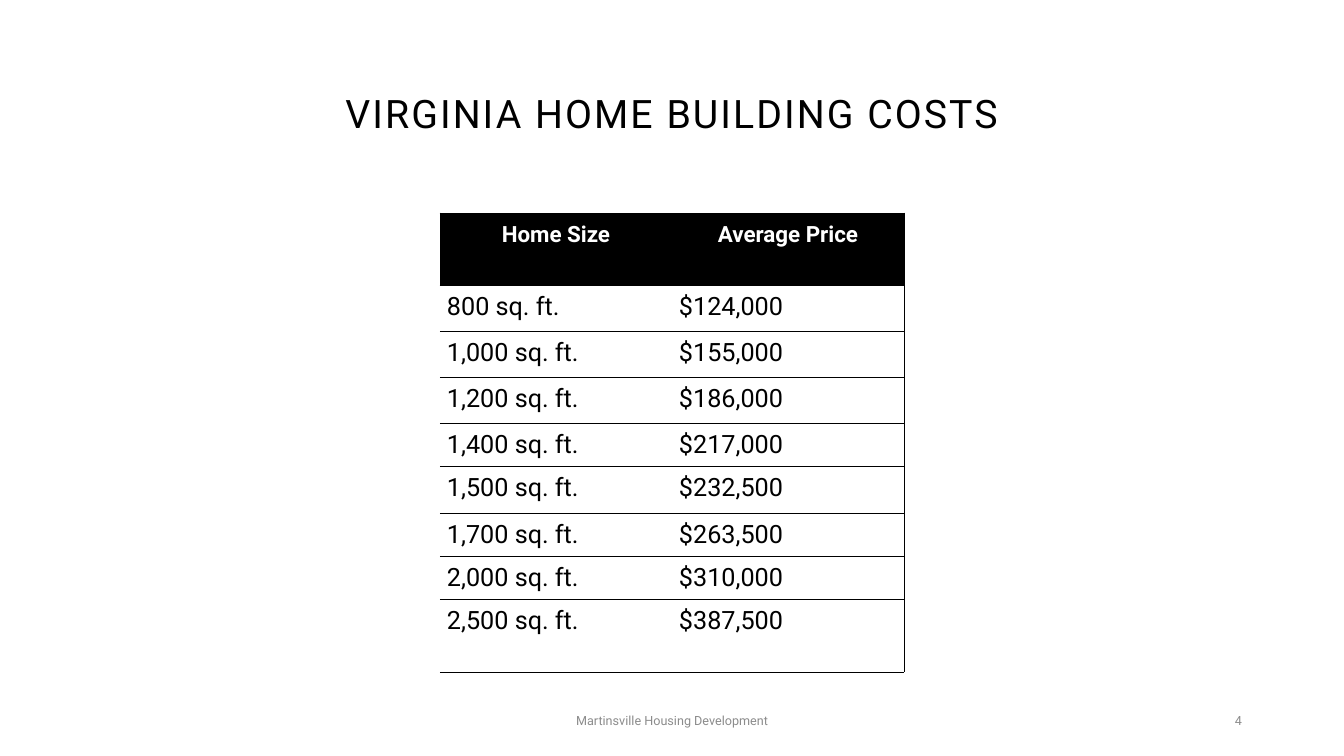
from dataclasses import dataclass

import pptx
import pptx.dml.color
import pptx.enum.text
import pptx.oxml.ns
import pptx.util
from lxml import etree

ALIGN = pptx.enum.text.PP_ALIGN
ANCHOR = pptx.enum.text.MSO_ANCHOR
PX = 914400 / 100.8


@dataclass(frozen=True)
class Theme:
    font: str = "Roboto"
    black: str = "000000"
    white: str = "FFFFFF"
    grey: str = "8C8C8C"
    title: int = 28
    header: int = 16
    body: int = 18
    footer: int = 9
    rule: float = 0.5


THEME = Theme()

HEADINGS = ("Home Size", "Average Price")
COSTS = (
    ("800 sq. ft.", "$124,000"),
    ("1,000 sq. ft.", "$155,000"),
    ("1,200 sq. ft.", "$186,000"),
    ("1,400 sq. ft.", "$217,000"),
    ("1,500 sq. ft.", "$232,500"),
    ("1,700 sq. ft.", "$263,500"),
    ("2,000 sq. ft.", "$310,000"),
    ("2,500 sq. ft.", "$387,500"),
)
ROW_HEIGHTS = (72, 46, 46, 46, 43, 47, 43, 43, 73)


def px(n):
    return pptx.util.Emu(round(n * PX))


def add_run(p, text, size, color, bold=False):
    r = p.add_run()
    r.text = text
    r.font.name = THEME.font
    r.font.size = pptx.util.Pt(size)
    r.font.bold = bold
    r.font.color.rgb = pptx.dml.color.RGBColor.from_string(color)
    return r


def add_label(slide, box, text, size, color, align):
    """Add one vertically centred line of text and return its run."""
    tf = slide.shapes.add_textbox(*map(px, box)).text_frame
    tf.word_wrap = True
    tf.vertical_anchor = ANCHOR.MIDDLE
    p = tf.paragraphs[0]
    p.alignment = align
    return add_run(p, text, size, color)


def add_title(slide, box):
    r = add_label(slide, box, "VIRGINIA HOME BUILDING COSTS",
                  THEME.title, THEME.black, ALIGN.CENTER)
    r.font._element.set("spc", "150")


def set_borders(cell, sides):
    """Rule the named sides (of L, R, T, B) and clear the others."""
    qn = pptx.oxml.ns.qn
    tc_pr = cell._tc.get_or_add_tcPr()
    for side in "LRTB":
        ln = etree.SubElement(tc_pr, qn(f"a:ln{side}"))
        if side in sides:
            ln.set("w", str(pptx.util.Pt(THEME.rule)))
            fill = etree.SubElement(ln, qn("a:solidFill"))
            etree.SubElement(fill, qn("a:srgbClr"), val=THEME.black)
        else:
            etree.SubElement(ln, qn("a:noFill"))


def fill_cell(cell, text, is_header, is_last_column):
    sides = "TB" + ("R" if is_last_column else "")
    set_borders(cell, sides + ("L" if is_header and not is_last_column else ""))
    cell.vertical_anchor = ANCHOR.TOP
    cell.margin_left = cell.margin_right = px(7)
    cell.margin_top = px(9 if is_header else 7)
    cell.margin_bottom = px(4)
    p = cell.text_frame.paragraphs[0]
    if is_header:
        cell.fill.solid()
        cell.fill.fore_color.rgb = pptx.dml.color.RGBColor.from_string(THEME.black)
        p.alignment = ALIGN.CENTER
        add_run(p, text, THEME.header, THEME.white, bold=True)
    else:
        cell.fill.background()
        p.alignment = ALIGN.LEFT
        add_run(p, text, THEME.body, THEME.black)


def add_cost_table(slide, box):
    rows = (HEADINGS,) + COSTS
    table = slide.shapes.add_table(len(rows), len(HEADINGS), *map(px, box)).table
    table.horz_banding = False
    for column in table.columns:
        column.width = px(box[2] / len(HEADINGS))
    for i, (values, height) in enumerate(zip(rows, ROW_HEIGHTS)):
        table.rows[i].height = px(height)
        for j, text in enumerate(values):
            fill_cell(table.cell(i, j), text, i == 0, j == len(values) - 1)


def add_footer(slide, box):
    """Place the centred footer and the page number at the right of the band."""
    left, top, width, height = box
    name_width, number_width = 454, 302
    add_label(slide, (left + (width - name_width) / 2, top, name_width, height),
              "Martinsville Housing Development", THEME.footer, THEME.grey, ALIGN.CENTER)
    add_label(slide, (left + width - number_width, top, number_width, height),
              "4", THEME.footer, THEME.grey, ALIGN.RIGHT)


def main():
    prs = pptx.Presentation()
    prs.slide_width, prs.slide_height = px(1344), px(756)
    slide = prs.slides.add_slide(prs.slide_layouts[6])
    add_title(slide, (92, 40, 1160, 146))
    add_cost_table(slide, (440, 213, 464, sum(ROW_HEIGHTS)))
    add_footer(slide, (92, 701, 1160, 40))
    prs.save("out.pptx")


if __name__ == "__main__":
    main()
